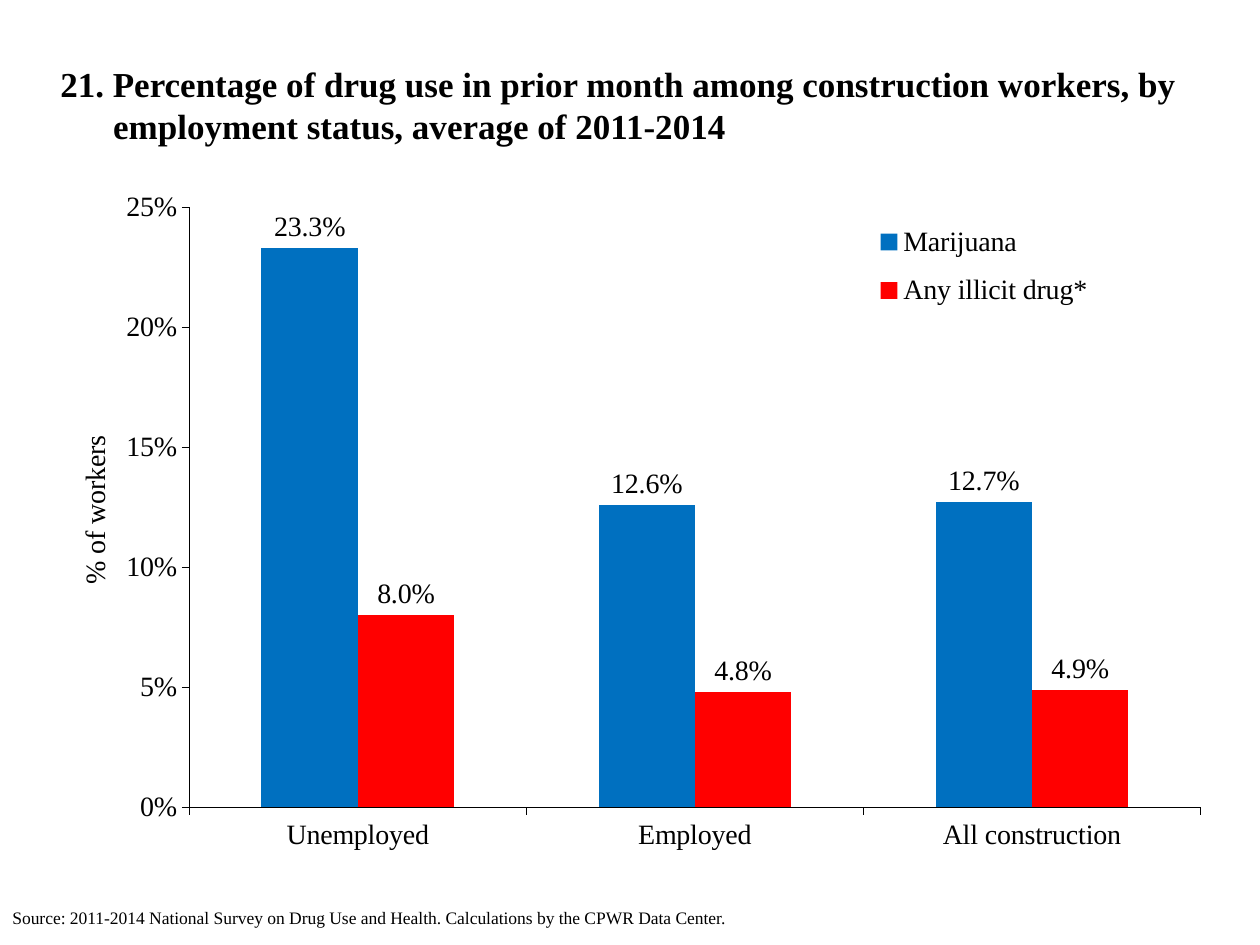
from pptx import Presentation
from pptx.chart.data import CategoryChartData
from pptx.dml.color import RGBColor
from pptx.enum.chart import XL_CHART_TYPE, XL_LABEL_POSITION, XL_LEGEND_POSITION, XL_TICK_MARK
from pptx.enum.text import MSO_ANCHOR
from pptx.oxml import parse_xml
from pptx.oxml.ns import nsdecls, qn
from pptx.util import Inches, Pt

COLUMNS = XL_CHART_TYPE.COLUMN_CLUSTERED
OUTSIDE_END = XL_LABEL_POSITION.OUTSIDE_END
LEGEND_BOTTOM = XL_LEGEND_POSITION.BOTTOM
TICK_OUT, TICK_NONE = XL_TICK_MARK.OUTSIDE, XL_TICK_MARK.NONE
TOP, MIDDLE = MSO_ANCHOR.TOP, MSO_ANCHOR.MIDDLE

TITLE = ("21. Percentage of drug use in prior month among construction workers, by"
         "\vemployment status, average of 2011-2014")
SOURCE = ("Source: 2011-2014 National Survey on Drug Use and Health. "
          "Calculations by the CPWR Data Center.")
CATEGORIES = ["Unemployed", "Employed", "All construction"]
DRUG_USE = [
    ("Marijuana", [0.233, 0.126, 0.127], "0070C0"),
    ("Any illicit drug*", [0.08, 0.048, 0.049], "FF0000"),
]


def color(hex_text):
    return RGBColor.from_string(hex_text)


def place(element, index, x, y, width=None, height=None, inner=False):
    """Give a chart part a manual layout, in fractions of the chart."""
    for old in element.findall(qn("c:layout")):
        element.remove(old)
    target = '<c:layoutTarget val="inner"/>' if inner else ""
    modes = '<c:xMode val="edge"/><c:yMode val="edge"/>'
    sizes = "".join(f'<c:{name} val="{value}"/>'
                    for name, value in zip("xywh", (x, y, width, height))
                    if value is not None)
    element.insert(index, parse_xml(
        f'<c:layout {nsdecls("c")}><c:manualLayout>{target}{modes}{sizes}'
        '</c:manualLayout></c:layout>'))


class SlideBuilder:
    font_name = "Times New Roman"
    ink = "000000"
    chart_size = 16

    def __init__(self, page):
        self.page = page

    def style(self, font, size, bold=False):
        font.name = self.font_name
        font.size = Pt(size)
        font.bold = bold
        font.color.rgb = color(self.ink)

    def text(self, words, left, top, width, height, size=10, bold=False,
             anchor=TOP, hanging=0):
        box = self.page.shapes.add_textbox(
            Inches(left), Inches(top), Inches(width), Inches(height))
        frame = box.text_frame
        frame.word_wrap = True
        frame.vertical_anchor = anchor
        para = frame.paragraphs[0]
        para.text = words
        for span in para.runs:
            self.style(span.font, size, bold)
        if hanging:
            properties = para._p.get_or_add_pPr()
            properties.set("marL", str(Inches(hanging)))
            properties.set("indent", str(-Inches(hanging)))

    def axis(self, axis):
        axis.has_major_gridlines = False
        axis.major_tick_mark = TICK_OUT
        axis.minor_tick_mark = TICK_NONE
        axis.format.line.color.rgb = color(self.ink)
        axis.format.line.width = Pt(0.25)
        self.style(axis.tick_labels.font, self.chart_size)

    def column_chart(self, categories, series_rows, left, top, width, height, value_title):
        data = CategoryChartData(number_format="0.0%")
        data.categories = categories
        for name, values, _ in series_rows:
            data.add_series(name, values)
        chart = self.page.shapes.add_chart(
            COLUMNS, Inches(left), Inches(top), Inches(width), Inches(height), data).chart
        self.style(chart.font, self.chart_size)
        chart.has_title = False

        plot = chart.plots[0]
        plot.gap_width = 150
        plot.overlap = 0
        plot.vary_by_categories = False
        for series, (_, _, fill) in zip(plot.series, series_rows):
            series.format.fill.solid()
            series.format.fill.fore_color.rgb = color(fill)
            labels = series.data_labels
            labels.show_value = True
            labels.number_format = "0.0%"
            labels.number_format_is_linked = False
            labels.position = OUTSIDE_END
            self.style(labels.font, self.chart_size)

        self.axis(chart.category_axis)
        value_axis = chart.value_axis
        self.axis(value_axis)
        value_axis.minimum_scale = 0
        value_axis.maximum_scale = 0.25
        value_axis.major_unit = 0.05
        value_axis.tick_labels.number_format = "0%"
        value_axis.tick_labels.number_format_is_linked = False
        title = value_axis.axis_title
        title.text_frame.text = value_title
        self.style(title.text_frame.paragraphs[0].runs[0].font, self.chart_size)

        chart.has_legend = True
        legend = chart.legend
        legend.position = LEGEND_BOTTOM
        legend.include_in_layout = False
        self.style(legend.font, self.chart_size)

        plot_area = chart._chartSpace.chart.plotArea
        place(plot_area, 0, 0.113, 0.027, 0.887, 0.894, inner=True)
        place(title._element, 1, 0.01, 0.36)
        place(legend._element, 1, 0.7, 0.03, 0.22, 0.17)


def main():
    deck = Presentation()
    deck.slide_width, deck.slide_height = Inches(10), Inches(7.5)
    builder = SlideBuilder(deck.slides.add_slide(deck.slide_layouts[6]))
    builder.text(TITLE, 0.38, 0.33, 9.25, 1, size=20, bold=True,
                 anchor=MIDDLE, hanging=0.42)
    builder.column_chart(CATEGORIES, DRUG_USE, 0.48, 1.5, 9.05, 5.33, "% of workers")
    builder.text(SOURCE, 0, 7.15, 10, 0.27)
    deck.save("out.pptx")


if __name__ == "__main__":
    main()
